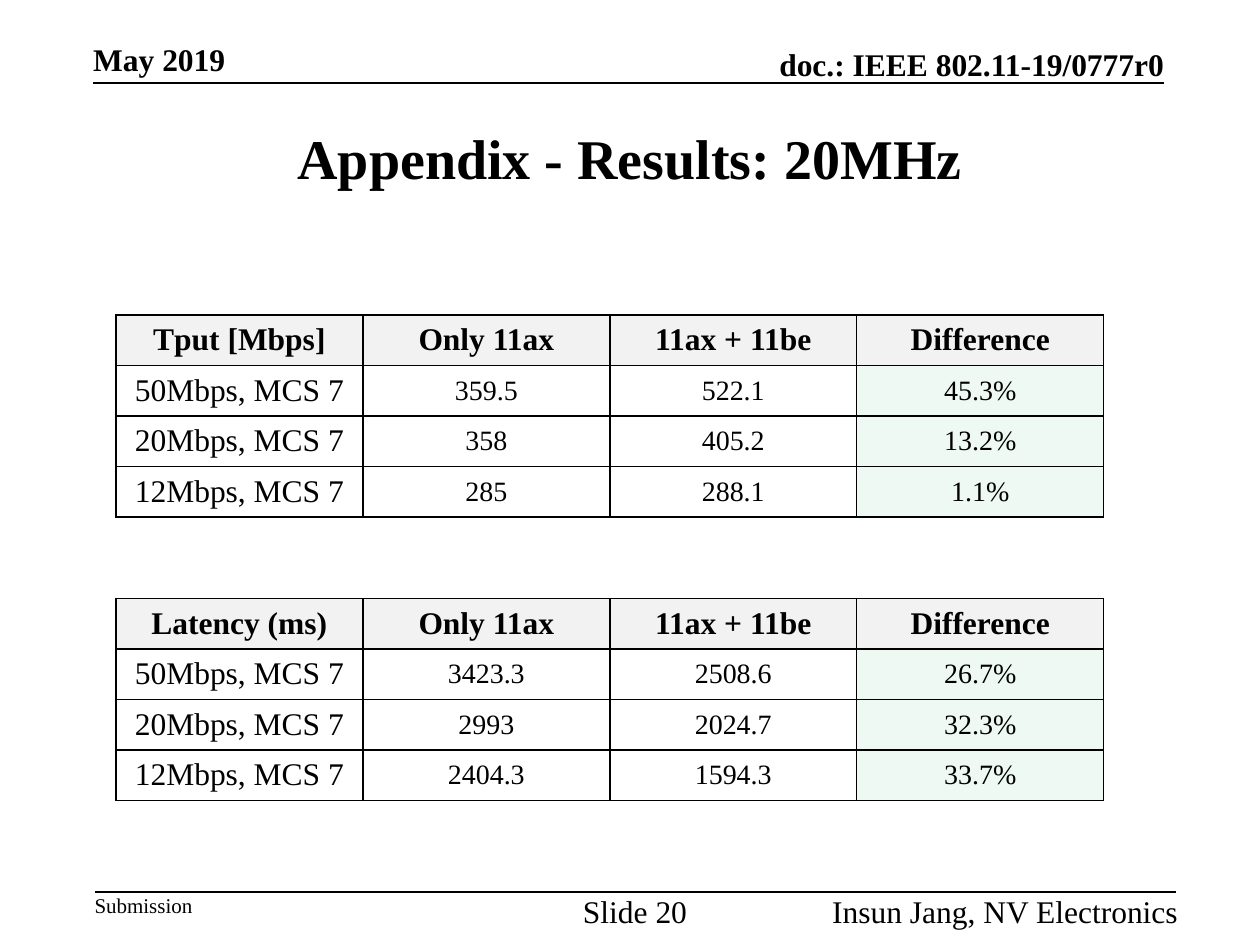
from lxml import etree
from pptx import Presentation
from pptx import util as u
from pptx.dml.color import RGBColor
from pptx.enum import shapes, text
from pptx.oxml import ns

ALIGN = text.PP_ALIGN
ANCHOR = text.MSO_ANCHOR


def colour(code):
    return RGBColor.from_string(code)


def set_all(target, values):
    for name, value in values.items():
        setattr(target, name, value)


class SlideBuilder:
    """Hold the slide style and draw each kind of element."""

    font = "Times New Roman"
    ink = "000000"
    header_fill = "F2F2F2"
    difference_fill = "EEF9F4"
    column_width = 1.96
    row_height = 0.4

    def __init__(self, page):
        self.page = page

    def add_words(self, para, words, size, bold=False, align=ALIGN.LEFT):
        para.alignment = align
        span = para.add_run()
        span.text = words
        set_all(span.font, {"name": self.font, "size": u.Pt(size), "bold": bold})
        span.font.color.rgb = colour(self.ink)

    def label(self, words, place, size=18, bold=False, align=ALIGN.LEFT,
              anchor=ANCHOR.TOP, wrap=False):
        box = self.page.shapes.add_textbox(*map(u.Inches, place))
        margins = {f"margin_{side}": 0 for side in ("left", "top", "right", "bottom")}
        set_all(box.text_frame, {"word_wrap": wrap, "vertical_anchor": anchor, **margins})
        self.add_words(box.text_frame.paragraphs[0], words, size, bold, align)

    def rule(self, left, right, top):
        ends = map(u.Inches, (left, top, right, top))
        line = self.page.shapes.add_connector(shapes.MSO_CONNECTOR.STRAIGHT, *ends)
        line.line.color.rgb = colour(self.ink)
        line.line.width = u.Pt(1)
        etree.SubElement(line._element.spPr, ns.qn("a:effectLst"))

    def border(self, cell):
        properties = cell._tc.get_or_add_tcPr()
        for position, side in enumerate(("lnL", "lnR", "lnT", "lnB")):
            edge = etree.Element(ns.qn(f"a:{side}"), w=str(u.Pt(1)))
            fill = etree.SubElement(edge, ns.qn("a:solidFill"))
            etree.SubElement(fill, ns.qn("a:srgbClr"), val=self.ink)
            properties.insert(position, edge)

    def cell(self, cell, words, row, column):
        is_header, is_value = row == 0, row > 0 and column > 0
        across, down = (0, 0) if is_value else (u.Inches(0.1), u.Inches(0.05))
        set_all(cell, {"vertical_anchor": ANCHOR.MIDDLE,
                       "margin_left": across, "margin_right": across,
                       "margin_top": down, "margin_bottom": down})
        self.add_words(cell.text_frame.paragraphs[0], words, 16 if is_value else 18,
                       is_header, ALIGN.CENTER)
        if is_header or column == 3:
            cell.fill.solid()
            cell.fill.fore_color.rgb = colour(
                self.header_fill if is_header else self.difference_fill)
        else:
            cell.fill.background()
        self.border(cell)

    def table(self, rows, left, top):
        size = (len(rows[0]) * self.column_width, len(rows) * self.row_height)
        frame = self.page.shapes.add_table(
            len(rows), len(rows[0]), *map(u.Inches, (left, top, *size)))
        grid = frame.table
        set_all(grid, {"first_row": False, "horz_banding": False})
        for column in grid.columns:
            column.width = u.Inches(self.column_width)
        for r, row in enumerate(rows):
            grid.rows[r].height = u.Inches(self.row_height)
            for c, words in enumerate(row):
                self.cell(grid.cell(r, c), words, r, c)


def main():
    deck = Presentation()
    set_all(deck, {"slide_width": u.Inches(10), "slide_height": u.Inches(7.5)})
    slide = SlideBuilder(deck.slides.add_slide(deck.slide_layouts[6]))

    slide.label("doc.: IEEE 802.11-19/0777r0", (5.65, 0.36, 3.59, 0.3),
                bold=True, align=ALIGN.RIGHT, anchor=ANCHOR.BOTTOM)
    slide.rule(0.74, 9.24, 0.66)
    slide.label("Submission", (0.75, 7.08, 0.78, 0.2), size=12)
    slide.rule(0.75, 9.33, 7.08)
    slide.label("May 2019", (0.74, 0.32, 1.06, 0.3), bold=True, anchor=ANCHOR.BOTTOM)
    slide.label("Appendix - Results: 20MHz", (0.75, 0.75, 8.5, 1), size=32, bold=True,
                align=ALIGN.CENTER, anchor=ANCHOR.MIDDLE, wrap=True)
    slide.label("Insun Jang, NV Electronics", (6.55, 7.08, 2.8, 0.3), align=ALIGN.RIGHT)
    slide.label("Slide 20", (4.59, 7.08, 0.9, 0.3), align=ALIGN.CENTER)

    headings = ("Only 11ax", "11ax + 11be", "Difference")
    rates = ("50Mbps, MCS 7", "20Mbps, MCS 7", "12Mbps, MCS 7")
    throughput = (("359.5", "522.1", "45.3%"),
                  ("358", "405.2", "13.2%"),
                  ("285", "288.1", "1.1%"))
    latency = (("3423.3", "2508.6", "26.7%"),
               ("2993", "2024.7", "32.3%"),
               ("2404.3", "1594.3", "33.7%"))
    for title, results, top in (("Tput [Mbps]", throughput, 2.5),
                                ("Latency (ms)", latency, 4.75)):
        body = [(rate, *values) for rate, values in zip(rates, results)]
        slide.table([(title, *headings), *body], 0.92, top)

    deck.save("out.pptx")


if __name__ == "__main__":
    main()
